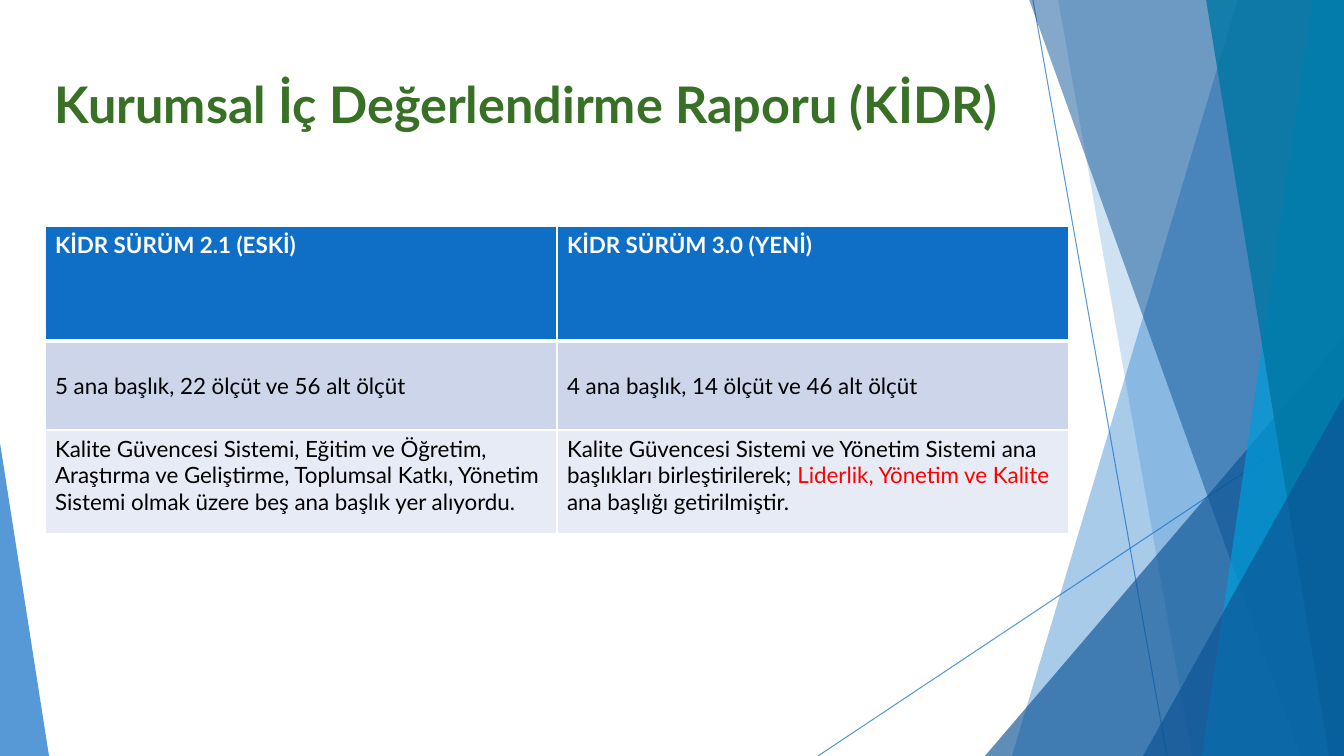
from dataclasses import dataclass

from lxml import etree
from pptx import Presentation
from pptx import util as u
from pptx.dml.color import RGBColor
from pptx.enum import shapes, text
from pptx.oxml import ns

EMU_PER_PX = 9144000 / 1008
WIDTH, HEIGHT = 1344, 756
FONT = "Lato"
BLUE, NAVY, WHITE, BLACK, RED = "0F6FC6", "0B5394", "FFFFFF", "000000", "FF0000"


@dataclass(frozen=True)
class Ray:
    """A thin line crossing the right side."""
    start: tuple[int, int]
    end: tuple[int, int]


@dataclass(frozen=True)
class Band:
    """A full-height facet from a slanted left edge to the right slide edge."""
    top_x: int
    bottom_x: int
    color: str
    opacity: int


@dataclass(frozen=True)
class Wedge:
    """A triangle standing on the bottom edge, its apex at a share of its width."""
    left: int
    top: int
    width: int
    apex: float
    color: str
    opacity: int


@dataclass(frozen=True)
class Run:
    """A stretch of text in one colour."""
    words: str
    color: str = BLACK


@dataclass(frozen=True)
class Row:
    """A table row with its height, fill and cells."""
    height: int
    fill: str
    anchor: text.MSO_ANCHOR
    cells: tuple[tuple[Run, ...], ...]
    bold: bool = False
    top_border: int = 1
    bottom_border: int = 1


RAYS = (Ray((1033, 0), (1167, HEIGHT)), Ray((WIDTH, 406), (818, HEIGHT)))
FACETS = (
    Band(1238, 1012, BLUE, 36),
    Band(1058, 1192, BLUE, 20),
    Wedge(985, 336, 359, 1, NAVY, 66),
    Band(1029, 1301, NAVY, 50),
    Band(1313, 1202, "009DD9", 70),
    Band(1206, 1329, "0076A3", 80),
    Wedge(1143, 396, 201, 1, NAVY, 66),
    Wedge(0, 443, 49, 0, BLUE, 70),
)
COLUMN_WIDTH = 512
ROWS = (
    Row(115, BLUE, text.MSO_ANCHOR.TOP, (
        (Run("KİDR SÜRÜM 2.1 (ESKİ)", WHITE),),
        (Run("KİDR SÜRÜM 3.0 (YENİ)", WHITE),),
    ), bold=True, bottom_border=3),
    Row(89, "CCD5EA", text.MSO_ANCHOR.MIDDLE, (
        (Run("5 ana başlık, 22 ölçüt ve 56 alt ölçüt"),),
        (Run("4 ana başlık, 14 ölçüt ve 46 alt ölçüt"),),
    ), top_border=3),
    Row(104, "E7EBF5", text.MSO_ANCHOR.TOP, (
        (Run("Kalite Güvencesi Sistemi, Eğitim ve Öğretim, Araştırma ve Geliştirme, "
             "Toplumsal Katkı, Yönetim Sistemi olmak üzere beş ana başlık yer alıyordu."),),
        (Run("Kalite Güvencesi Sistemi ve Yönetim Sistemi ana başlıkları birleştirilerek; "),
         Run("Liderlik, Yönetim ve Kalite ", RED),
         Run("ana başlığı getirilmiştir.")),
    )),
)


def px(length: int) -> u.Emu:
    """Turn pixels into EMU."""
    return u.Emu(round(length * EMU_PER_PX))


def rgb(color: str) -> RGBColor:
    """Turn a hex string into a colour."""
    return RGBColor.from_string(color)


def set_opacity(shape, percent: int) -> None:
    """Make every explicit colour of a shape translucent."""
    for color in shape.element.iter(ns.qn("a:srgbClr")):
        etree.SubElement(color, ns.qn("a:alpha"), val=str(percent * 1000))


def add_ray(slide, ray: Ray) -> None:
    """Draw a thin translucent line."""
    line = slide.shapes.add_connector(
        shapes.MSO_CONNECTOR.STRAIGHT, *map(px, ray.start + ray.end))
    line.line.color.rgb = rgb(BLUE)
    line.line.width = u.Pt(0.75)
    set_opacity(line, 70)
    etree.SubElement(line.element.spPr, ns.qn("a:effectLst"))


def add_facet(slide, facet: Band | Wedge) -> None:
    """Draw a translucent band or wedge."""
    if isinstance(facet, Band):
        builder = slide.shapes.build_freeform(px(facet.top_x), px(-1))
        corners = ((WIDTH, -1), (WIDTH, HEIGHT), (facet.bottom_x, HEIGHT))
        builder.add_line_segments([(px(x), px(y)) for x, y in corners])
        shape = builder.convert_to_shape()
    else:
        shape = slide.shapes.add_shape(
            shapes.MSO_SHAPE.ISOSCELES_TRIANGLE, px(facet.left), px(facet.top),
            px(facet.width), px(HEIGHT - facet.top))
        shape.adjustments[0] = facet.apex
    shape.shadow.inherit = False
    shape.fill.solid()
    shape.fill.fore_color.rgb = rgb(facet.color)
    shape.line.fill.background()
    set_opacity(shape, facet.opacity)


def add_run(paragraph, content: Run, size: int, bold: bool) -> None:
    """Append one formatted run."""
    run = paragraph.add_run()
    run.text = content.words
    run.font.name = FONT
    run.font.size = u.Pt(size)
    run.font.bold = bold
    run.font.color.rgb = rgb(content.color)


def add_border(cell, side: str, points: int) -> None:
    """Add a white border to one side of a cell."""
    properties = cell._tc.get_or_add_tcPr()
    border = etree.SubElement(properties, ns.qn(f"a:ln{side}"), w=str(u.Pt(points)))
    fill = etree.SubElement(border, ns.qn("a:solidFill"))
    etree.SubElement(fill, ns.qn("a:srgbClr"), val=WHITE)


def add_comparison(slide) -> None:
    """Draw the table comparing both report versions."""
    columns = len(ROWS[0].cells)
    table = slide.shapes.add_table(
        len(ROWS), columns, px(45), px(226), px(columns * COLUMN_WIDTH),
        px(sum(row.height for row in ROWS))).table
    for column in table.columns:
        column.width = px(COLUMN_WIDTH)
    for index, row in enumerate(ROWS):
        table.rows[index].height = px(row.height)
        borders = {"L": 1, "R": 1, "T": row.top_border, "B": row.bottom_border}
        for cell, runs in zip(table.rows[index].cells, row.cells):
            for side, points in borders.items():
                add_border(cell, side, points)
            cell.fill.solid()
            cell.fill.fore_color.rgb = rgb(row.fill)
            cell.vertical_anchor = row.anchor
            for run in runs:
                add_run(cell.text_frame.paragraphs[0], run, 16, row.bold)


def add_title(slide) -> None:
    """Draw the slide title."""
    frame = slide.shapes.add_textbox(px(45), px(68), px(1009), px(145)).text_frame
    frame.word_wrap = True
    title = Run("Kurumsal İç Değerlendirme Raporu (KİDR)", "387026")
    add_run(frame.paragraphs[0], title, 36, True)


def main() -> None:
    """Build and save the slide."""
    presentation = Presentation()
    presentation.slide_width, presentation.slide_height = px(WIDTH), px(HEIGHT)
    slide = presentation.slides.add_slide(presentation.slide_layouts[6])
    for ray in RAYS:
        add_ray(slide, ray)
    for facet in FACETS:
        add_facet(slide, facet)
    add_comparison(slide)
    add_title(slide)
    presentation.save("out.pptx")


if __name__ == "__main__":
    main()
